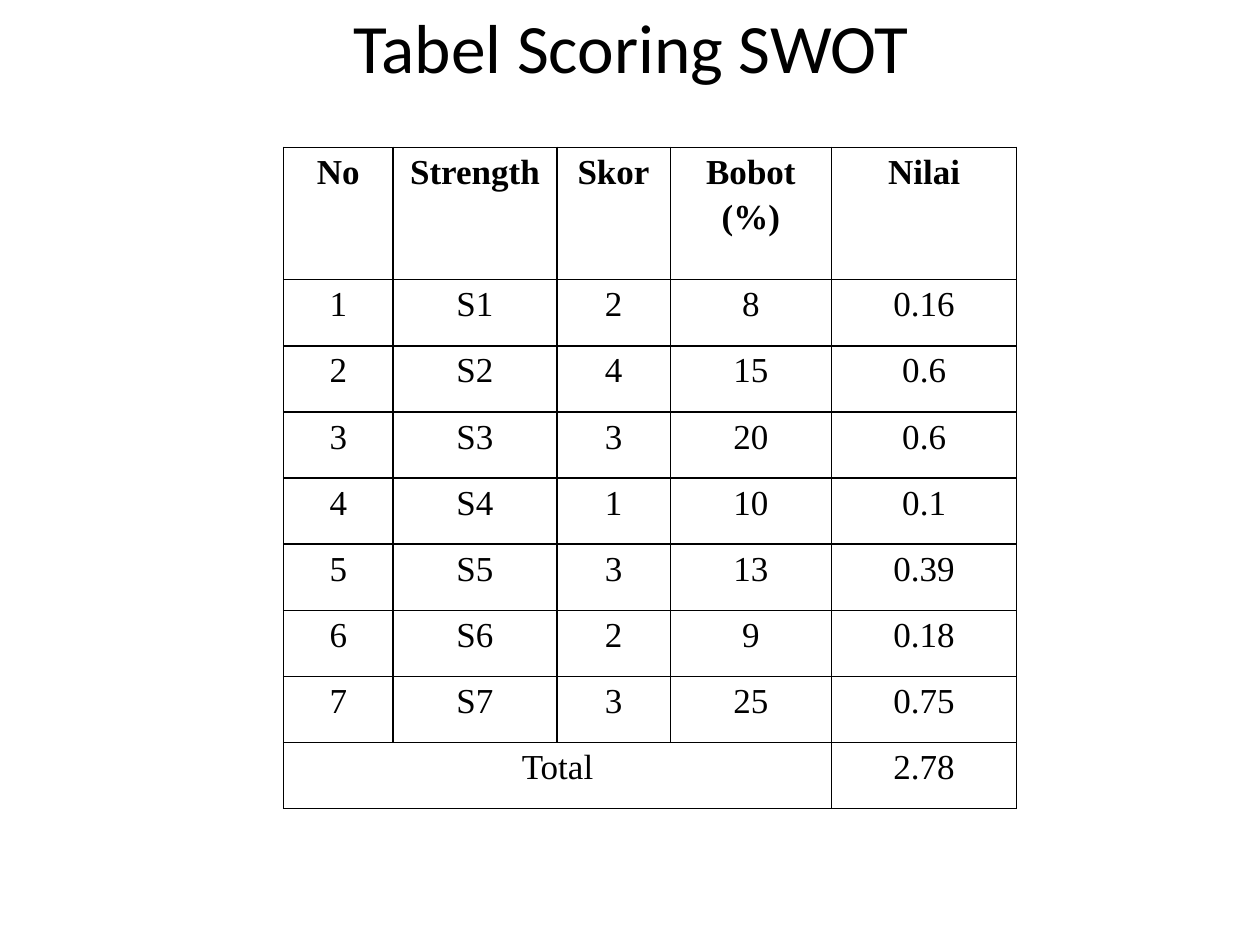
from lxml.etree import SubElement
from pptx import Presentation
from pptx.dml.color import RGBColor
from pptx.enum.text import MSO_ANCHOR, PP_ALIGN
from pptx.oxml.ns import qn
from pptx.util import Inches, Pt

THEME = {
    "ink": "000000",
    "paper": "FFFFFF",
    "title_font": "Calibri",
    "table_font": "Times New Roman",
    "title_size": Pt(39.6),
    "table_size": Pt(20),
    "border": Pt(1),
}


def set_values(target, values):
    for name, value in values.items():
        setattr(target, name, value)


def add_borders(cell):
    properties = cell._tc.get_or_add_tcPr()
    for side in ("a:lnL", "a:lnR", "a:lnT", "a:lnB"):
        line = SubElement(properties, qn(side), w=str(THEME["border"]))
        fill = SubElement(line, qn("a:solidFill"))
        SubElement(fill, qn("a:srgbClr"), val=THEME["ink"])


presentation = Presentation()
set_values(presentation, {"slide_width": Inches(10), "slide_height": Inches(7.5)})
slide = presentation.slides.add_slide(presentation.slide_layouts[5])

title = slide.shapes.title
set_values(title, {
    "left": Inches(0.51), "top": Inches(0.03),
    "width": Inches(9), "height": Inches(0.67),
})
title.text_frame.text = "Tabel Scoring SWOT"
title.text_frame.vertical_anchor = MSO_ANCHOR.MIDDLE
paragraph = title.text_frame.paragraphs[0]
paragraph.alignment = PP_ALIGN.CENTER
set_values(paragraph.font, {"name": THEME["title_font"], "size": THEME["title_size"]})
paragraph.font.color.rgb = RGBColor.from_string(THEME["ink"])

strengths = [(2, 8), (4, 15), (3, 20), (1, 10), (3, 13), (2, 9), (3, 25)]
total = sum(score * weight for score, weight in strengths) / 100
rows = [("No", "Strength", "Skor", "Bobot (%)", "Nilai")]
for number, (score, weight) in enumerate(strengths, 1):
    rows.append((number, f"S{number}", score, weight, f"{score * weight / 100:g}"))
rows.append(("Total", "", "", "", f"{total:g}"))

column_widths = [0.87, 1.3, 0.9, 1.28, 1.47]
row_heights = [1.05] + [0.525] * (len(rows) - 1)
table = slide.shapes.add_table(
    len(rows), len(column_widths), Inches(2.25), Inches(1.17),
    Inches(sum(column_widths)), Inches(sum(row_heights)),
).table
table.horz_banding = False
for column, width in zip(table.columns, column_widths):
    column.width = Inches(width)
for row, height in zip(table.rows, row_heights):
    row.height = Inches(height)

cell_format = {
    "margin_left": Inches(0.07), "margin_right": Inches(0.07),
    "margin_top": 0, "margin_bottom": 0,
    "vertical_anchor": MSO_ANCHOR.TOP,
}
for row_index, values in enumerate(rows):
    for column_index, value in enumerate(values):
        cell = table.cell(row_index, column_index)
        cell.text = str(value)
        set_values(cell, cell_format)
        add_borders(cell)
        cell.fill.solid()
        cell.fill.fore_color.rgb = RGBColor.from_string(THEME["paper"])
        paragraph = cell.text_frame.paragraphs[0]
        set_values(paragraph, {"alignment": PP_ALIGN.CENTER, "line_spacing": 1.15})
        set_values(paragraph.font, {
            "name": THEME["table_font"], "size": THEME["table_size"],
            "bold": row_index == 0,
        })
        paragraph.font.color.rgb = RGBColor.from_string(THEME["ink"])

last_row = len(rows) - 1
table.cell(last_row, 0).merge(table.cell(last_row, 3))

presentation.save("out.pptx")
